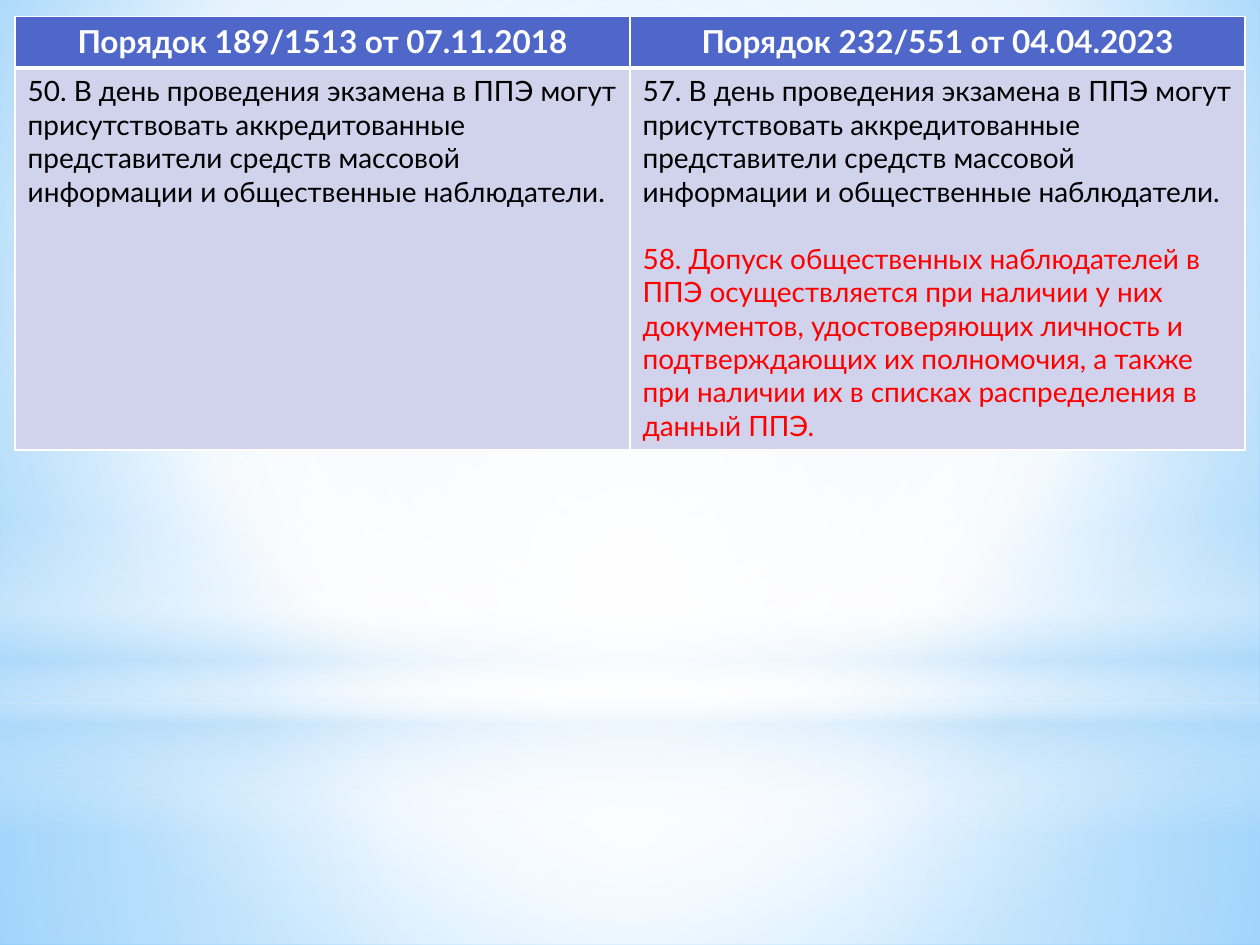
from lxml import etree
from pptx import Presentation, util as u
from pptx.dml.color import RGBColor
from pptx.enum import shapes, text
from pptx.oxml import ns

CENTRE = (50, 50, 50, 50)
BACKGROUND = [(0, "9ED5FF", 100), (60, "FFFFFF", 100), (100, "5BB9FF", 100)]
LOWER_GLOW = [(0, "FFFFFF", 91), (37, "FFFFFF", 76), (100, "B4DCFA", 79)]
UPPER_GLOW = [(0, "FFFFFF", 89), (48, "FFFFFF", 62), (100, "B4DCFA", 79)]
HORIZON = [(0, "FFFFFF", 0), (29, "FFFFFF", 30), (45, "B4DCFA", 40),
           (55, "FFFFFF", 26), (65, "B4DCFA", 60), (100, "FFFFFF", 0)]
HALO = [(0, "FFFFFF", 100), (56, "FFFFFF", 0)]

HEADER = {"size": u.Pt(18), "bold": True, "color": "FFFFFF", "fill": "4E67C8",
          "alignment": text.PP_ALIGN.CENTER, "borders": {"L": 1, "R": 1, "T": 1, "B": 3}}
BODY = {"size": u.Pt(16), "bold": False, "color": "000000", "fill": "D0D3EB",
        "alignment": text.PP_ALIGN.LEFT, "borders": {"L": 1, "R": 1, "T": 1, "B": 1}}

OBSERVERS = ("В день проведения экзамена в ППЭ могут присутствовать аккредитованные "
             "представители средств массовой информации и общественные наблюдатели.")
ADMISSION = ("58. Допуск общественных наблюдателей в ППЭ осуществляется при наличии у них "
             "документов, удостоверяющих личность и подтверждающих их полномочия, а также "
             "при наличии их в списках распределения в данный ППЭ.")


def color(value):
    return RGBColor.from_string(value)


def add_element(parent, tag, **attributes):
    return etree.SubElement(parent, ns.qn(tag), {key: str(value) for key, value in attributes.items()})


class SlideBuilder:
    """Holds the style and the current slide and adds each kind of element."""

    font = "Lato"

    def __init__(self, presentation):
        self.slide = presentation.slides.add_slide(presentation.slide_layouts[6])

    def gradient(self, solid, stops, focus=None):
        gradient = etree.Element(ns.qn("a:gradFill"), rotWithShape="1")
        stop_list = add_element(gradient, "a:gsLst")
        for position, value, opacity in stops:
            stop = add_element(stop_list, "a:gs", pos=position * 1000)
            shade = add_element(stop, "a:srgbClr", val=value)
            if opacity < 100:
                add_element(shade, "a:alpha", val=opacity * 1000)
        if focus:
            circle = etree.SubElement(gradient, ns.qn("a:path"), {"path": "circle"})
            edges = {edge: side * 1000 for edge, side in zip("ltrb", focus)}
            add_element(circle, "a:fillToRect", **edges)
        else:
            add_element(gradient, "a:lin", ang=90 * 60000, scaled=0)
        solid.getparent().replace(solid, gradient)

    def background(self, stops, focus):
        fill = self.slide.background.fill
        fill.solid()
        fill.fore_color.rgb = color("FFFFFF")
        self.gradient(self.slide.element.xpath("./p:cSld/p:bg/p:bgPr/a:solidFill")[0], stops, focus)

    def glow(self, kind, top, height, stops, focus=CENTRE):
        shape = self.slide.shapes.add_shape(
            kind, 0, u.Inches(top), u.Inches(10), u.Inches(height))
        shape.shadow.inherit = False
        shape.line.fill.background()
        shape.fill.solid()
        shape.fill.fore_color.rgb = color("FFFFFF")
        self.gradient(shape.element.xpath("./p:spPr/a:solidFill")[0], stops, focus)

    def cell(self, cell, paragraphs, style):
        cell.fill.solid()
        cell.fill.fore_color.rgb = color(style["fill"])
        properties = cell._tc.get_or_add_tcPr()
        for index, (side, width) in enumerate(style["borders"].items()):
            line = add_element(properties, f"a:ln{side}", w=u.Pt(width))
            add_element(add_element(line, "a:solidFill"), "a:srgbClr", val="FFFFFF")
            properties.insert(index, line)
        frame = cell.text_frame
        for index, (content, changes) in enumerate(paragraphs):
            values = {**style, **changes}
            paragraph = frame.add_paragraph() if index else frame.paragraphs[0]
            for name in ("alignment", "space_before"):
                if name in values:
                    setattr(paragraph, name, values[name])
            run = paragraph.add_run()
            run.text = content
            for name, value in {"name": self.font, "size": values["size"], "bold": values["bold"]}.items():
                setattr(run.font, name, value)
            run.font.color.rgb = color(values["color"])

    def table(self, left, top, width, heights, rows):
        table = self.slide.shapes.add_table(
            len(rows), len(rows[0]), u.Inches(left), u.Inches(top),
            u.Inches(width), u.Inches(sum(heights))).table
        for index, (height, cells) in enumerate(zip(heights, rows)):
            table.rows[index].height = u.Inches(height)
            for column, paragraphs in enumerate(cells):
                self.cell(table.cell(index, column), paragraphs, BODY if index else HEADER)


def main():
    presentation = Presentation()
    presentation.slide_width, presentation.slide_height = u.Inches(10), u.Inches(7.5)
    builder = SlideBuilder(presentation)
    rectangle, oval = shapes.MSO_SHAPE.RECTANGLE, shapes.MSO_SHAPE.OVAL
    builder.background(BACKGROUND, (20, 10, 20, 60))
    builder.glow(rectangle, 5.58, 1.92, LOWER_GLOW)
    builder.glow(rectangle, 0, 5.58, UPPER_GLOW)
    builder.glow(rectangle, 4.12, 2.5, HORIZON, None)
    builder.glow(oval, 1.75, 5.58, HALO)
    addition = {"color": "FF0000", "space_before": u.Pt(19.2)}
    builder.table(0.12, 0.13, 9.76, (0.41, 3.03), [
        [[("Порядок 189/1513 от 07.11.2018", {})], [("Порядок 232/551 от 04.04.2023", {})]],
        [[(f"50. {OBSERVERS}", {})], [(f"57. {OBSERVERS}", {}), (ADMISSION, addition)]],
    ])
    presentation.save("out.pptx")


if __name__ == "__main__":
    main()
